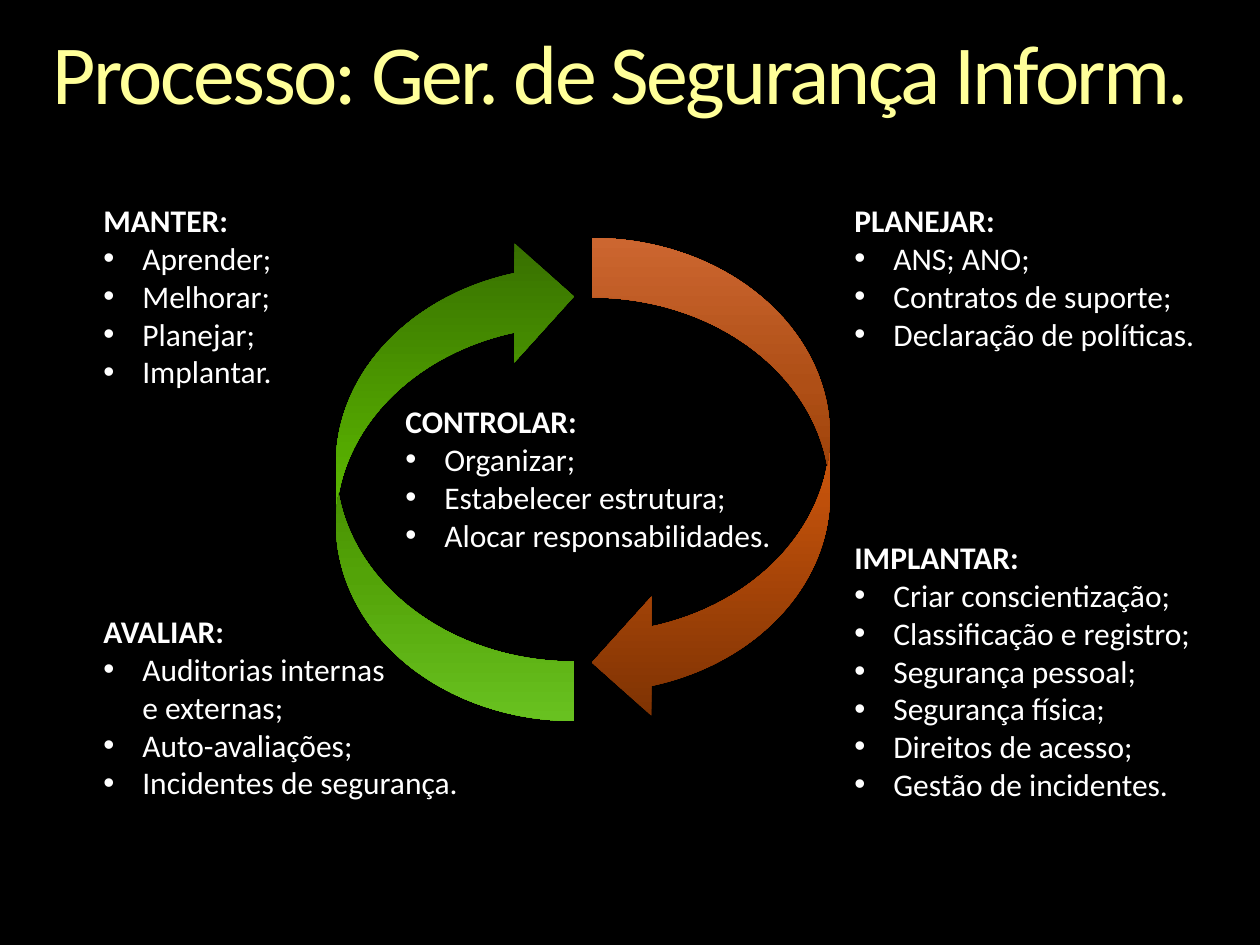
from dataclasses import dataclass

from lxml.etree import SubElement
from pptx import Presentation
from pptx.dml.color import RGBColor
from pptx.enum.shapes import MSO_SHAPE
from pptx.enum.text import MSO_ANCHOR, MSO_AUTO_SIZE, PP_ALIGN
from pptx.oxml.ns import qn
from pptx.slide import Slide
from pptx.util import Emu, Pt

PX_PER_INCH = 126
FONT = "Calibri"
INDENT = 39
COLORS = {"background": "000000", "title": "FFFF99", "text": "FFFFFF"}
GRADIENTS = {
    "orange": {0: "7D3203", 50: "C4520B", 70: "DB631C", 100: "FF803C"},
    "green": {0: "376E00", 50: "58B100", 70: "68CC0B", 100: "83F229"},
}


@dataclass
class Arrow:
    left: int
    top: int
    gradient: str
    rotation: int


@dataclass
class Block:
    left: int
    top: int
    width: int
    height: int
    heading: str
    items: list[str]
    wrap: bool = False


ARROW_SIZE = (238, 484)
ARROWS = [Arrow(592, 238, "orange", 0), Arrow(336, 237, "green", 180)]

BLOCKS = [
    Block(393, 396, 394, 165, "CONTROLAR:",
          ["Organizar;", "Estabelecer estrutura;", "Alocar responsabilidades."]),
    Block(842, 195, 369, 165, "PLANEJAR:",
          ["ANS; ANO;", "Contratos de suporte;", "Declaração de políticas."]),
    Block(842, 532, 365, 280, "IMPLANTAR:",
          ["Criar conscientização;", "Classificação e registro;", "Segurança pessoal;",
           "Segurança física;", "Direitos de acesso;", "Gestão de incidentes."]),
    Block(91, 195, 197, 204, "MANTER:",
          ["Aprender;", "Melhorar;", "Planejar;", "Implantar."]),
    Block(91, 606, 394, 204, "AVALIAR:",
          ["Auditorias internas\ne externas;", "Auto-avaliações;",
           "Incidentes de segurança."], wrap=True),
]


def px(value: int) -> Emu:
    return Emu(round(value * 914400 / PX_PER_INCH))


def color(name: str) -> RGBColor:
    return RGBColor.from_string(COLORS[name])


def add_title(slide: Slide, text: str) -> None:
    title = slide.shapes.title
    title.left, title.top, title.width, title.height = map(px, (53, 32, 1155, 92))
    frame = title.text_frame
    frame.margin_left = frame.margin_right = frame.margin_top = frame.margin_bottom = 0
    frame.word_wrap = True
    frame.auto_size = MSO_AUTO_SIZE.SHAPE_TO_FIT_TEXT
    frame.vertical_anchor = MSO_ANCHOR.TOP
    paragraph = frame.paragraphs[0]
    paragraph.alignment = PP_ALIGN.LEFT
    paragraph.line_spacing = 0.9
    run = paragraph.add_run()
    run.text = text
    run.font.name, run.font.size = FONT, Pt(48)
    run.font.color.rgb = color("title")
    run.font._element.set("spc", "-150")


def add_arrow(slide: Slide, arrow: Arrow) -> None:
    shape = slide.shapes.add_shape(MSO_SHAPE.CURVED_RIGHT_ARROW, px(arrow.left),
                                   px(arrow.top), *map(px, ARROW_SIZE))
    shape.shadow.inherit = False
    shape.rotation = arrow.rotation
    shape._element.spPr.find(qn("a:xfrm")).set("flipH", "1")
    shape.line.fill.background()
    # Four gradient stops, running upwards
    shape.fill.gradient()
    shape.fill.gradient_angle = 90
    stops = shape._element.spPr.find(qn("a:gradFill")).find(qn("a:gsLst"))
    for stop in list(stops):
        stops.remove(stop)
    for position, value in GRADIENTS[arrow.gradient].items():
        stop = SubElement(stops, qn("a:gs"), pos=str(position * 1000))
        SubElement(stop, qn("a:srgbClr"), val=value)


def add_block(slide: Slide, block: Block) -> None:
    box = slide.shapes.add_textbox(px(block.left), px(block.top),
                                   px(block.width), px(block.height))
    frame = box.text_frame
    frame.word_wrap = block.wrap
    frame.auto_size = MSO_AUTO_SIZE.SHAPE_TO_FIT_TEXT
    for index, text in enumerate([block.heading, *block.items]):
        is_heading = index == 0
        paragraph = frame.paragraphs[0] if is_heading else frame.add_paragraph()
        if not is_heading:
            properties = paragraph._p.get_or_add_pPr()
            properties.set("marL", str(px(INDENT)))
            properties.set("indent", str(-px(INDENT)))
            SubElement(properties, qn("a:buFont"), typeface="Arial")
            SubElement(properties, qn("a:buChar"), char="•")
        for line_number, line in enumerate(text.split("\n")):
            if line_number:
                paragraph.add_line_break()
            run = paragraph.add_run()
            run.text = line
            run.font.name, run.font.size = FONT, Pt(18)
            run.font.bold = is_heading
            run.font.color.rgb = color("text")


def main() -> None:
    presentation = Presentation()
    presentation.slide_width, presentation.slide_height = px(1260), px(945)
    slide = presentation.slides.add_slide(presentation.slide_layouts[5])
    slide.background.fill.solid()
    slide.background.fill.fore_color.rgb = color("background")

    add_title(slide, "Processo: Ger. de Segurança Inform.")
    # Cycle of two arrows
    for arrow in ARROWS:
        add_arrow(slide, arrow)
    # Process stages
    for block in BLOCKS:
        add_block(slide, block)

    presentation.save("out.pptx")


if __name__ == "__main__":
    main()
